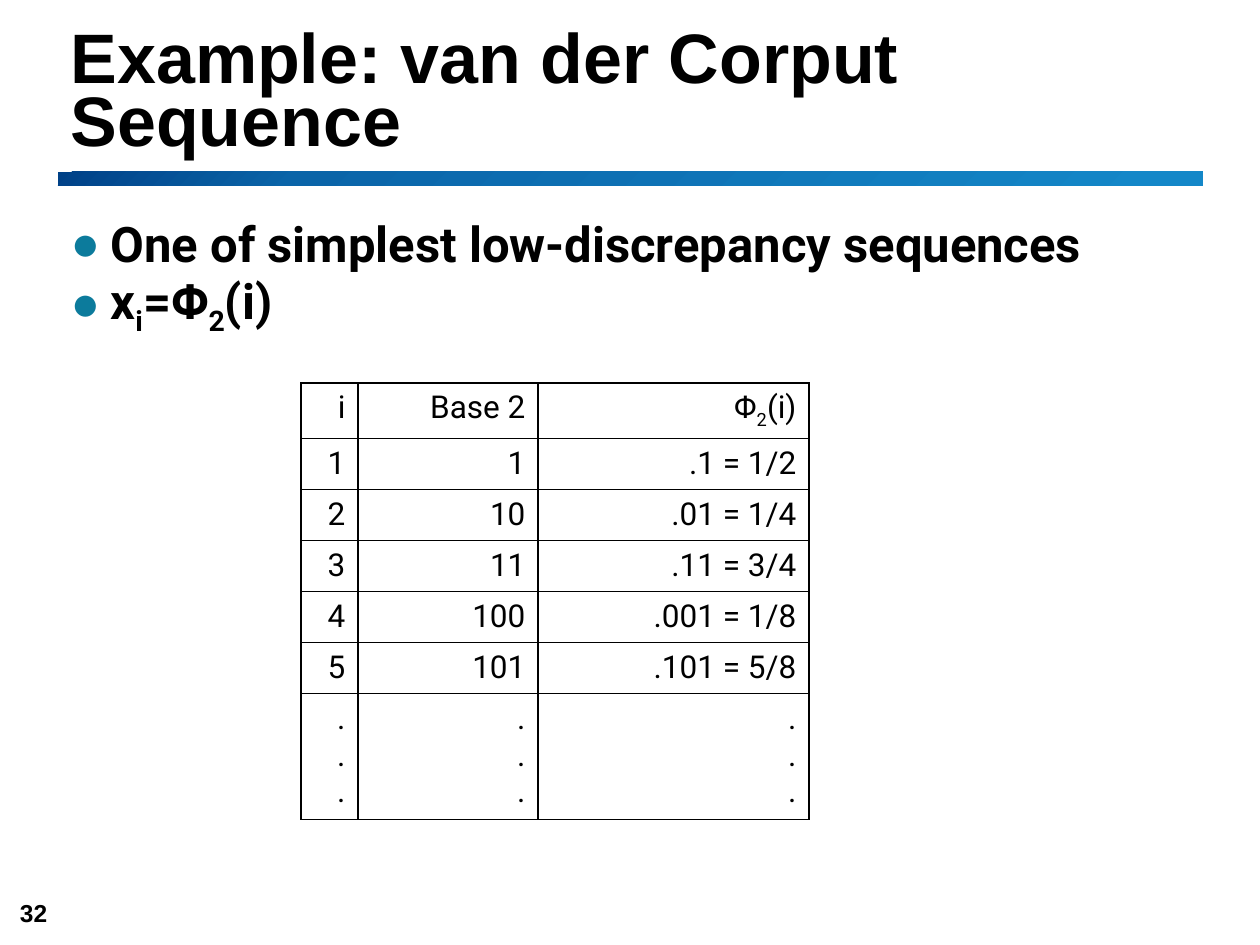
from lxml import etree
from pptx import Presentation
from pptx import util as u
from pptx.dml import color
from pptx.enum import shapes, text
from pptx.oxml import ns

SCALE = 914400 / 126
BULLETS = [["One of simplest low-discrepancy sequences"], ["x", "_i", "=Φ", "_2", "(i)"]]
HEADER = ["i", "Base 2", ["Φ", "_2", "(i)"]]
SEQUENCE = [
    ("1", "1", ".1 = 1/2"),
    ("2", "10", ".01 = 1/4"),
    ("3", "11", ".11 = 3/4"),
    ("4", "100", ".001 = 1/8"),
    ("5", "101", ".101 = 5/8"),
]
COLUMN_WIDTHS = [57, 180, 271]
ROW_HEIGHTS = [54] + [51] * 5 + [124]


def px(length):
    return u.Emu(round(length * SCALE))


def rgb(value):
    return color.RGBColor.from_string(value)


def add_xml(parent, tag, **attributes):
    return etree.SubElement(parent, ns.qn(tag), attributes)


def place(shape, left, top, width, height):
    shape.left, shape.top, shape.width, shape.height = map(px, (left, top, width, height))


def style(paragraph, size, family, bold=False):
    font = paragraph.font
    font.size, font.name, font.bold = u.Pt(size), family, bold
    font.color.rgb = rgb("000000")


def write_formula(paragraph, parts):
    for part in parts:
        run = paragraph.add_run()
        run.text = part.removeprefix("_")
        if part.startswith("_"):
            run._r.get_or_add_rPr().set("baseline", "-25000")


def add_bullet(paragraph, bullet_color):
    properties = paragraph._p.get_or_add_pPr()
    properties.set("marL", str(px(40)))
    properties.set("indent", str(px(-40)))
    add_xml(add_xml(properties, "a:buClr"), "a:srgbClr", val=bullet_color)
    add_xml(properties, "a:buFont", typeface="Arial")
    add_xml(properties, "a:buChar", char="●")


def add_title(slide, wording):
    title = slide.shapes.title
    place(title, 58, 42, 1142, 125)
    frame = title.text_frame
    frame.text = wording
    frame.auto_size = text.MSO_AUTO_SIZE.NONE
    frame.vertical_anchor = text.MSO_ANCHOR.BOTTOM
    heading = frame.paragraphs[0]
    heading.alignment = text.PP_ALIGN.LEFT
    heading.line_spacing = u.Pt(36)
    style(heading, 40, "Arial", True)


def add_rule(slide):
    rule = slide.shapes.add_shape(shapes.MSO_SHAPE.RECTANGLE, px(58), px(172), px(1145), px(14))
    rule.shadow.inherit = False
    rule.line.fill.background()
    rule.fill.gradient()
    rule.fill.gradient_angle = 315
    stops = rule._element.spPr.find(ns.qn("a:gradFill")).find(ns.qn("a:gsLst"))
    for stop in list(stops):
        stops.remove(stop)
    for percent, shade in [(0, "004187"), (21, "0A64A8"), (96, "1487C8")]:
        stop = add_xml(stops, "a:gs", pos=str(percent * 1000))
        add_xml(stop, "a:srgbClr", val=shade)


def add_body(slide, items):
    body = slide.placeholders[1]
    place(body, 58, 219, 1147, 698)
    frame = body.text_frame
    frame.auto_size = text.MSO_AUTO_SIZE.NONE
    for index, parts in enumerate(items):
        item = frame.add_paragraph() if index else frame.paragraphs[0]
        write_formula(item, parts)
        add_bullet(item, "0C7B9C")
        item.line_spacing = u.Pt(27)
        item.space_before = u.Pt(6 if index else 0)
        item.space_after = u.Pt(4)
        style(item, 28, "Roboto", True)


def add_borders(cell):
    properties = cell._tc.get_or_add_tcPr()
    for index, side in enumerate(("a:lnL", "a:lnR", "a:lnT", "a:lnB")):
        border = etree.Element(ns.qn(side), w=str(u.Pt(1)))
        add_xml(add_xml(border, "a:solidFill"), "a:srgbClr", val="000000")
        properties.insert(index, border)


def fill_cell(cell, content):
    cell.fill.background()
    add_borders(cell)
    if isinstance(content, str):
        cell.text = content
    else:
        write_formula(cell.text_frame.paragraphs[0], content)
    for line in cell.text_frame.paragraphs:
        line.alignment = text.PP_ALIGN.RIGHT
        style(line, 18, "Roboto")


def add_sequence_table(slide, rows):
    frame = slide.shapes.add_table(
        len(rows), len(COLUMN_WIDTHS), px(301), px(383),
        px(sum(COLUMN_WIDTHS)), px(sum(ROW_HEIGHTS)))
    table = frame.table
    table.first_row = table.horz_banding = False
    for column, width in zip(table.columns, COLUMN_WIDTHS):
        column.width = px(width)
    for row, height, contents in zip(table.rows, ROW_HEIGHTS, rows):
        row.height = px(height)
        for cell, content in zip(row.cells, contents):
            fill_cell(cell, content)


def add_page_number(slide, number):
    box = slide.shapes.add_textbox(px(20), px(898), px(36), px(29))
    frame = box.text_frame
    frame.margin_left = frame.margin_right = frame.margin_top = frame.margin_bottom = 0
    frame.vertical_anchor = text.MSO_ANCHOR.BOTTOM
    frame.word_wrap = False
    frame.text = number
    style(frame.paragraphs[0], 14, "Arial", True)


def main():
    deck = Presentation()
    deck.slide_width, deck.slide_height = px(1260), px(945)
    slide = deck.slides.add_slide(deck.slide_layouts[1])
    add_page_number(slide, "32")
    add_rule(slide)
    add_title(slide, "Example: van der Corput Sequence")
    add_body(slide, BULLETS)
    add_sequence_table(slide, [HEADER, *SEQUENCE, [".\n.\n."] * 3])
    deck.save("out.pptx")


if __name__ == "__main__":
    main()
